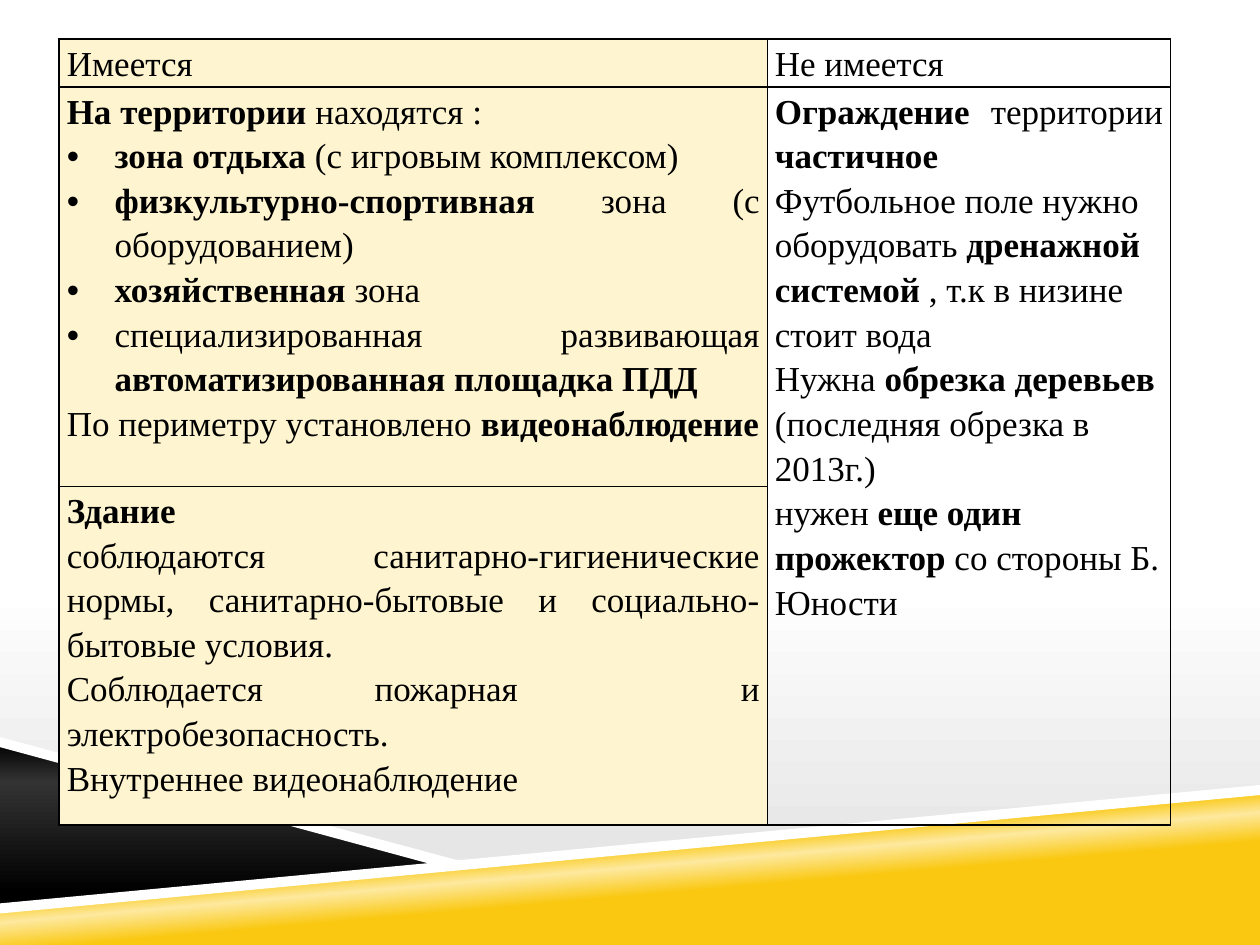
import pptx
import pptx.dml.color
import pptx.enum.text
import pptx.oxml
import pptx.oxml.ns
import pptx.util
from pptx.util import Inches


def color(value):
    return pptx.dml.color.RGBColor.from_string(value)


def set_gradient(fill, stops, angle):
    fill.gradient()
    fill.gradient_angle = angle
    stop_list = fill.gradient_stops[0]._gs.getparent()
    for stop in list(stop_list):
        stop_list.remove(stop)
    for position, value in stops:
        stop_list.append(pptx.oxml.parse_xml(
            f'<a:gs {namespace} pos="{position * 1000}">'
            f'<a:srgbClr val="{value}"/></a:gs>'))


namespace = pptx.oxml.ns.nsdecls("a")
deck = pptx.Presentation()
deck.slide_width, deck.slide_height = Inches(10), Inches(7.5)
page = deck.slides.add_slide(deck.slide_layouts[6])
set_gradient(page.background.fill,
             [(0, "FFFFFF"), (62, "FFFFFF"), (90, "E6E6E6"), (100, "FFFFFF")], 270)

yellow_stops = [(39, "FAC810"), (50, "FDE99F"), (58, "FAC810")]
black_stops = [(0, "000000"), (24, "333333"), (90, "000000")]
bands = [
    ([(0, 7.21), (10, 6.27), (10, 7.5), (0, 7.5)], yellow_stops, 95),
    ([(0, 5.89), (3.59, 6.85), (0, 7.21)], black_stops, 270),
    ([(10, 6.23), (0, 7.17), (0, 7.25), (10, 6.31)], None, None),
    ([(0, 5.85), (0, 5.93), (3.5, 6.88), (3.75, 6.86)], None, None),
]
for corners, stops, angle in bands:
    points = [(Inches(x), Inches(y)) for x, y in corners]
    builder = page.shapes.build_freeform(*points[0])
    builder.add_line_segments(points[1:], close=True)
    band = builder.convert_to_shape()
    band.shadow.inherit = False
    band.line.fill.background()
    if stops:
        set_gradient(band.fill, stops, angle)
    else:
        band.fill.solid()
        band.fill.fore_color.rgb = color("FFFFFF")

widths = [5.62, 3.2]
heights = [0.38, 3.17, 2.69]
frame = page.shapes.add_table(len(heights), len(widths), Inches(0.47), Inches(0.31),
                              Inches(sum(widths)), Inches(sum(heights)))
table = frame.table
table.first_row = table.horz_banding = False
for column, width in zip(table.columns, widths):
    column.width = Inches(width)
for row, height in zip(table.rows, heights):
    row.height = Inches(height)
table.cell(1, 1).merge(table.cell(2, 1))

texts = {
    (0, 0): ["Имеется"],
    (0, 1): ["Не имеется"],
    (1, 0): [
        "**На территории** находятся :",
        "•**зона отдыха** (с игровым комплексом)",
        "•**физкультурно-спортивная** зона (с оборудованием)",
        "•**хозяйственная** зона",
        "•специализированная развивающая **автоматизированная площадка ПДД**",
        "По периметру установлено **видеонаблюдение**",
    ],
    (1, 1): [
        "**Ограждение** территории **частичное**",
        "<Футбольное поле нужно оборудовать **дренажной системой** , т.к в низине стоит вода",
        "<Нужна **обрезка деревьев** (последняя обрезка в 2013г.)",
        "<нужен **еще один прожектор** со стороны Б. Юности",
    ],
    (2, 0): [
        "**Здание**",
        "соблюдаются санитарно-гигиенические нормы, санитарно-бытовые и "
        "социально-бытовые условия.",
        "Соблюдается пожарная  и электробезопасность.",
        "Внутреннее видеонаблюдение",
    ],
}
align = pptx.enum.text.PP_ALIGN
for row in range(len(heights)):
    for column in range(len(widths)):
        cell = table.cell(row, column)
        cell.margin_left = cell.margin_right = Inches(0.06)
        cell.margin_top = cell.margin_bottom = 0
        properties = cell._tc.get_or_add_tcPr()
        for side in "LRTB":
            properties.append(pptx.oxml.parse_xml(
                f'<a:ln{side} {namespace} w="{pptx.util.Pt(1)}"><a:solidFill>'
                f'<a:srgbClr val="000000"/></a:solidFill></a:ln{side}>'))
        if column == 0:
            cell.fill.solid()
            cell.fill.fore_color.rgb = color("FEF4CF")
        else:
            cell.fill.background()
        for index, text in enumerate(texts.get((row, column), [])):
            box = cell.text_frame
            para = box.add_paragraph() if index else box.paragraphs[0]
            para.alignment = align.LEFT if text.startswith("<") else align.JUSTIFY
            para.line_spacing = 1.15
            if text.startswith("•"):
                layout = para._p.get_or_add_pPr()
                layout.set("marL", str(Inches(0.38)))
                layout.set("indent", str(-Inches(0.38)))
                for bullet in ('buFont {} typeface="Arial"', 'buChar {} char="•"'):
                    layout.append(pptx.oxml.parse_xml(f"<a:{bullet.format(namespace)}/>"))
            para.font.name = "Times New Roman"
            para.font.size = pptx.util.Pt(20)
            para.font.color.rgb = color("000000")
            for part, words in enumerate(text.lstrip("•<").split("**")):
                if words:
                    span = para.add_run()
                    span.text = words
                    span.font.bold = part % 2 == 1

deck.save("out.pptx")
